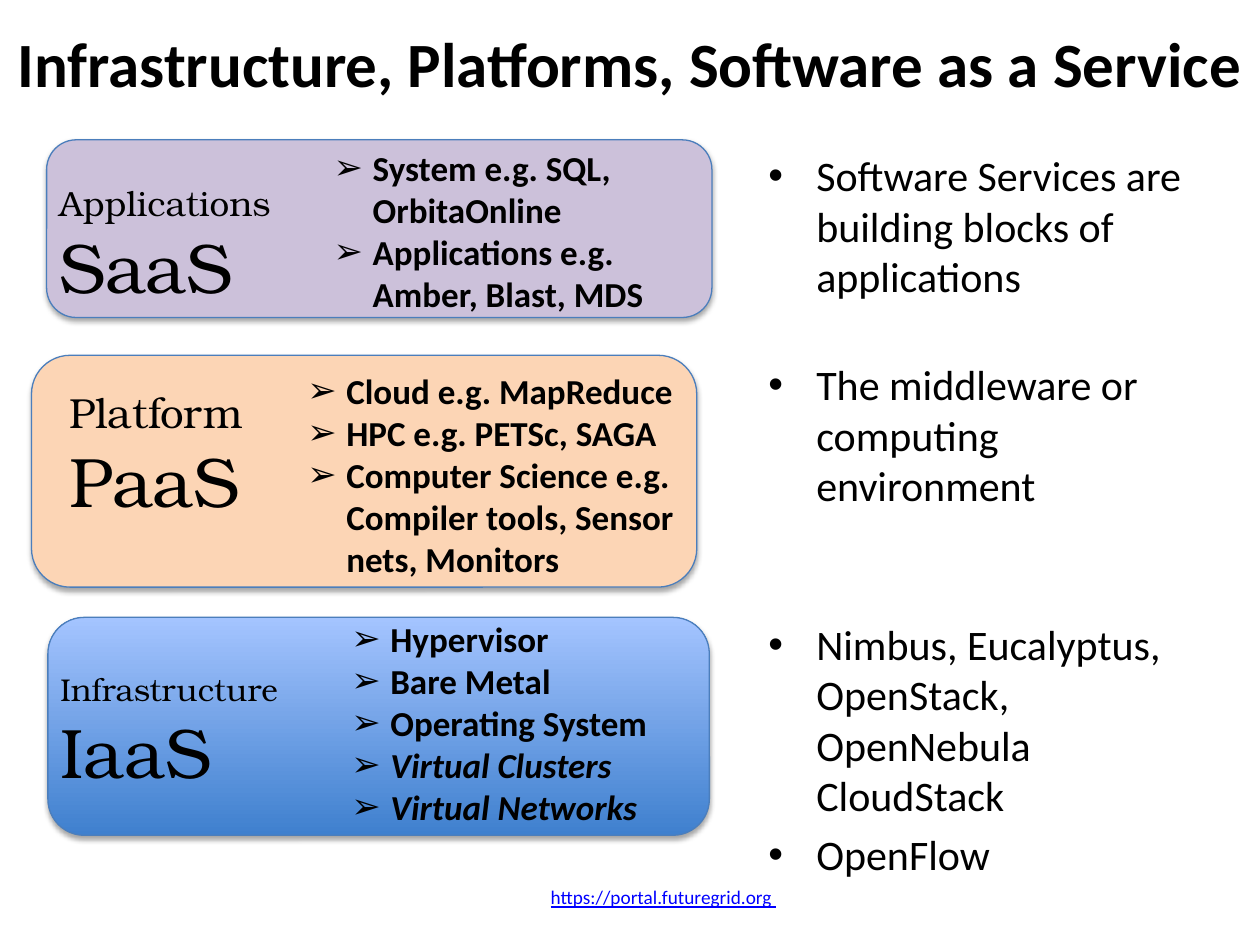
from lxml.etree import SubElement
from pptx import Presentation
from pptx.dml.color import RGBColor
from pptx.enum.shapes import MSO_SHAPE
from pptx.enum.text import MSO_ANCHOR, PP_ALIGN
from pptx.oxml.ns import qn
from pptx.util import Inches, Pt

BLACK, OUTLINE, LINK = "000000", "4B7EBC", "0000FF"
SANS, SERIF = "Calibri", "TeX Gyre Bonum"

TITLE = "Infrastructure, Platforms, Software as a Service"
FOOTER = "https://portal.futuregrid.org "

# Areas are left, top, width, height in inches; two colours make a gradient
LAYERS = [
    {"box": (0.37, 1.11, 5.28, 1.41), "colors": ["CCC1DA"],
     "name": "Applications", "short": "SaaS", "name_size": 20,
     "label_area": (0.37, 1.39, 2.18, 1.11), "list_area": (2.55, 1.11, 2.87, 1.45),
     "items": ["System e.g. SQL, OrbitaOnline",
               "Applications e.g.\vAmber, Blast, MDS"], "italic": []},
    {"box": (0.25, 2.82, 5.28, 1.84), "colors": ["FCD5B5"],
     "name": "Platform", "short": "PaaS", "name_size": 24,
     "label_area": (0.45, 3.02, 2.05, 1.18), "list_area": (2.34, 2.88, 3.42, 1.78),
     "items": ["Cloud e.g. MapReduce", "HPC e.g. PETSc, SAGA",
               "Computer Science e.g. Compiler tools, Sensor nets, Monitors"],
     "italic": []},
    {"box": (0.38, 4.9, 5.25, 1.73), "colors": ["3F80CE", "A4C4FF"],
     "name": "Infrastructure", "short": "IaaS", "name_size": 18,
     "label_area": (0.38, 5.27, 2.38, 1.08), "list_area": (2.69, 4.85, 2.94, 1.78),
     "items": ["Hypervisor", "Bare Metal", "Operating System"],
     "italic": ["Virtual Clusters", "Virtual Networks"]},
]

# Text and the space before it in points
NOTES = [
    ("Software Services are building blocks of applications", 0),
    ("The middleware or computing environment", 33),
    ("Nimbus, Eucalyptus, OpenStack, OpenNebula\vCloudStack", 62),
    ("OpenFlow", 4.8),
]


def rgb(color):
    return RGBColor.from_string(color)


def add_text_box(slide, area, anchor=MSO_ANCHOR.TOP):
    frame = slide.shapes.add_textbox(*map(Inches, area)).text_frame
    frame.word_wrap = True
    frame.vertical_anchor = anchor
    return frame


def add_text(frame, text, size, font=SANS, color=BLACK, bold=False, italic=False,
             bullet=None, indent=0, before=0, align=PP_ALIGN.LEFT):
    """Fill the frame's first paragraph, or add one if that is already used."""
    first = frame.paragraphs[0]
    paragraph = frame.add_paragraph() if first.runs else first
    paragraph.text = text
    paragraph.alignment = align
    paragraph.space_before = Pt(before)
    if bullet:
        properties = paragraph._p.get_or_add_pPr()
        properties.set("marL", str(Inches(indent)))
        properties.set("indent", str(-Inches(indent)))
        SubElement(properties, qn("a:buFont"), typeface="Arial")
        SubElement(properties, qn("a:buChar"), char=bullet)
    paragraph.font.size = Pt(size)
    paragraph.font.name = font
    paragraph.font.bold = bold
    paragraph.font.italic = italic
    paragraph.font.color.rgb = rgb(color)
    return paragraph


def add_soft_shadow(shape):
    effects = SubElement(shape._element.spPr, qn("a:effectLst"))
    shadow = SubElement(effects, qn("a:outerShdw"), blurRad=str(Pt(3.1)),
                        dist=str(Pt(1.8)), dir="5400000", rotWithShape="0")
    color = SubElement(shadow, qn("a:srgbClr"), val=BLACK)
    SubElement(color, qn("a:alpha"), val="35000")


def add_layer(slide, layer):
    shape = slide.shapes.add_shape(MSO_SHAPE.ROUNDED_RECTANGLE,
                                   *map(Inches, layer["box"]))
    colors = layer["colors"]
    if len(colors) == 1:
        shape.fill.solid()
        shape.fill.fore_color.rgb = rgb(colors[0])
    else:
        shape.fill.gradient()
        shape.fill.gradient_angle = 90
        for stop, color in zip(shape.fill.gradient_stops, colors):
            stop.color.rgb = rgb(color)
    shape.line.color.rgb = rgb(OUTLINE)
    shape.line.width = Pt(0.75)
    add_soft_shadow(shape)

    label = add_text_box(slide, layer["label_area"])
    add_text(label, layer["name"], layer["name_size"], SERIF)
    add_text(label, layer["short"], 40, SERIF)

    examples = add_text_box(slide, layer["list_area"])
    for item in layer["items"] + layer["italic"]:
        add_text(examples, item, 20, bold=True, italic=item in layer["italic"],
                 bullet="➢", indent=0.31)


def main():
    presentation = Presentation()
    presentation.slide_width, presentation.slide_height = Inches(10), Inches(7.5)
    slide = presentation.slides.add_slide(presentation.slide_layouts[6])

    footer = add_text_box(slide, (3.44, 6.92, 3.65, 0.4), MSO_ANCHOR.MIDDLE)
    address = add_text(footer, FOOTER, 11, color=LINK, align=PP_ALIGN.CENTER)
    address.font.underline = True

    title = add_text_box(slide, (0, 0.08, 10, 0.83), MSO_ANCHOR.MIDDLE)
    add_text(title, TITLE, 36, bold=True, align=PP_ALIGN.CENTER)

    notes = add_text_box(slide, (6, 1.14, 3.75, 4.95))
    for text, before in NOTES:
        add_text(notes, text, 24, bullet="•", indent=0.38, before=before)

    for layer in LAYERS:
        add_layer(slide, layer)
    presentation.save("out.pptx")


if __name__ == "__main__":
    main()
